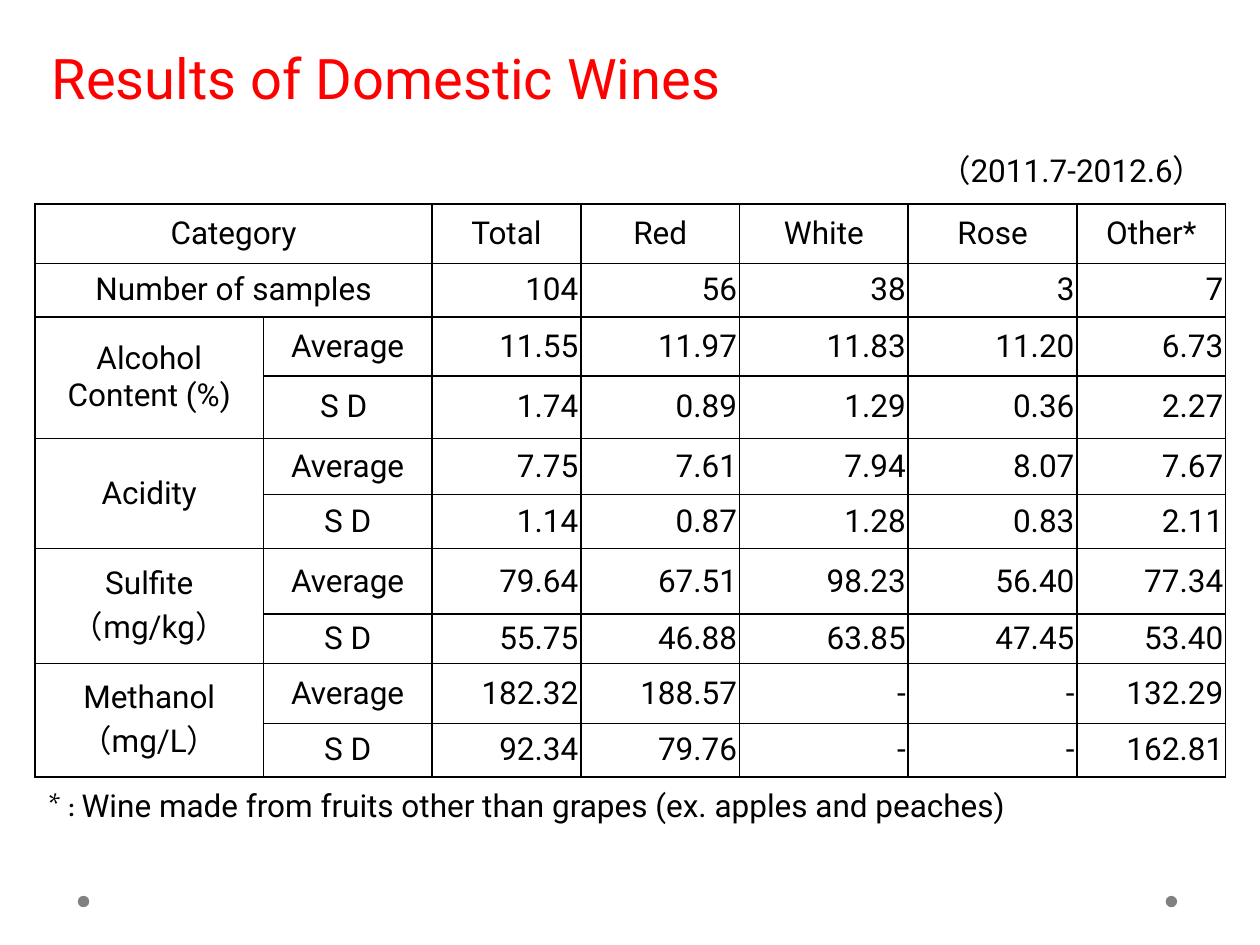
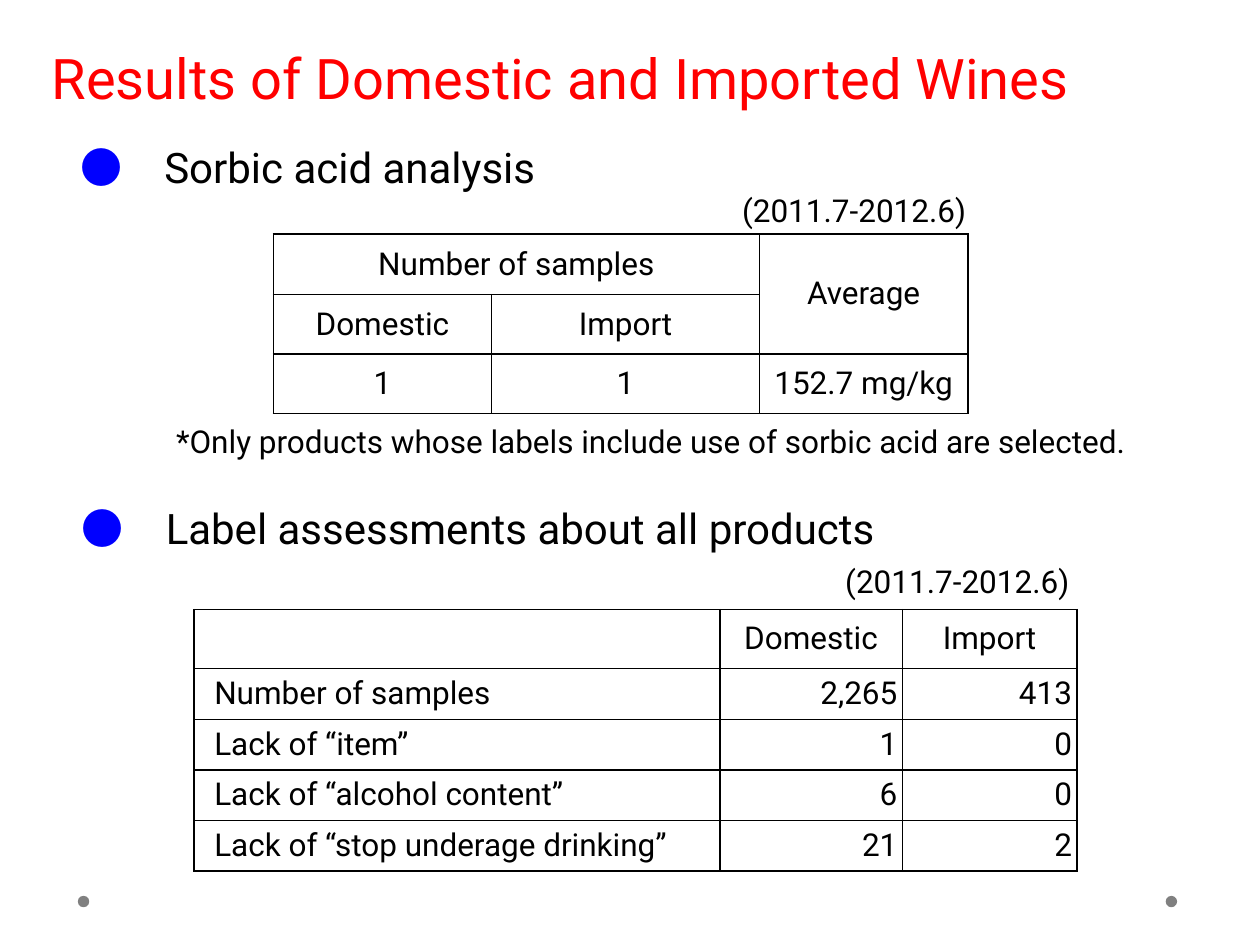
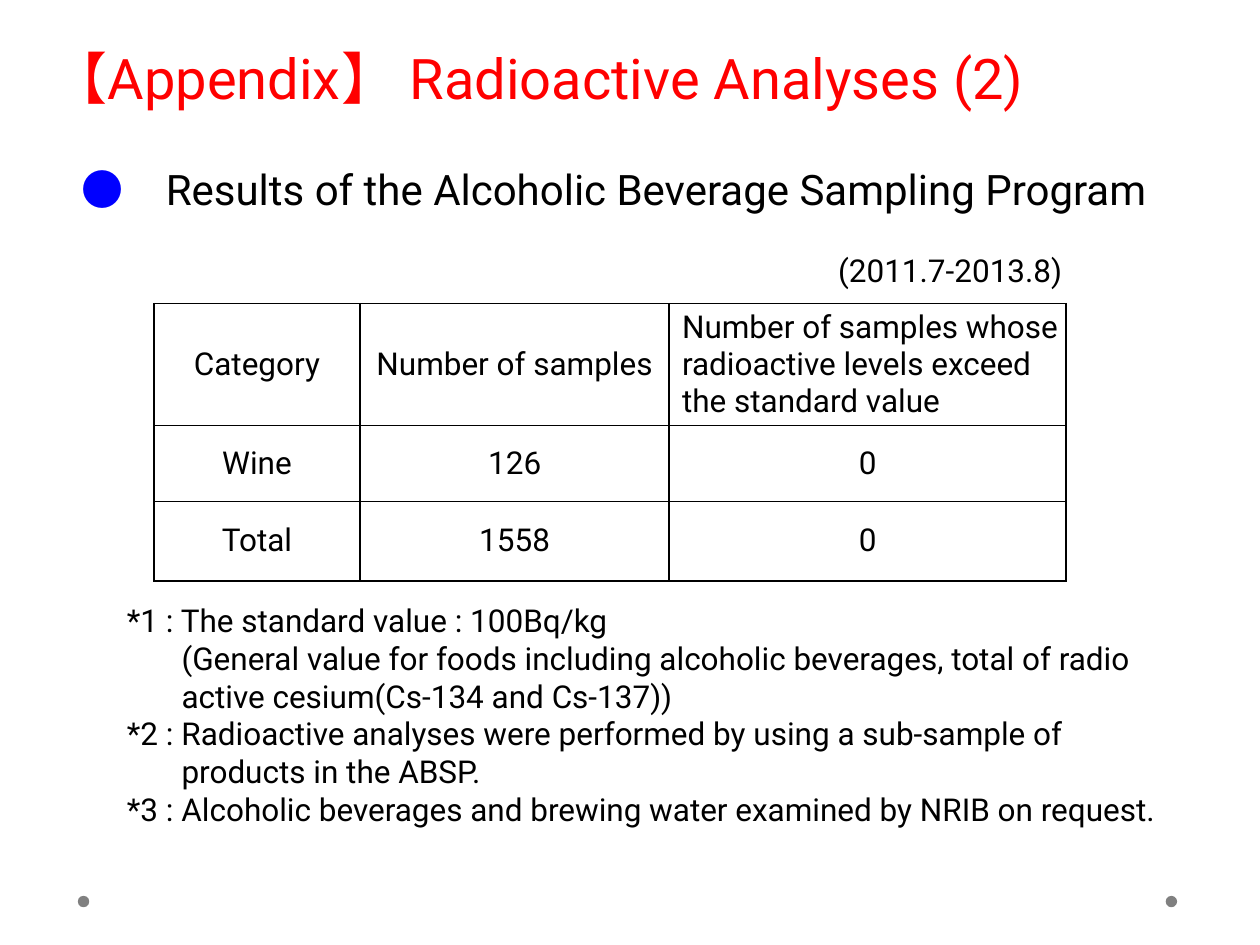
from dataclasses import dataclass

import lxml.etree
import pptx
import pptx.dml.color
import pptx.enum.shapes
import pptx.enum.text
import pptx.oxml.ns
import pptx.presentation
import pptx.slide
import pptx.table
import pptx.text.text
import pptx.util

Cm, Pt = pptx.util.Cm, pptx.util.Pt
Color = pptx.dml.color.RGBColor
Align = pptx.enum.text.PP_ALIGN
qn = pptx.oxml.ns.qn


# Shared look
@dataclass(frozen=True)
class Theme:
    font: str = "Roboto"
    serif: str = "Vollkorn"
    ink: Color = Color(0, 0, 0)
    red: Color = Color(255, 0, 0)
    blue: Color = Color(0, 0, 255)
    grey: Color = Color(128, 128, 128)
    title: int = 32
    head: int = 24
    body: int = 18
    rule: int = 1


THEME = Theme()
ALIGN = {"l": Align.LEFT, "c": Align.CENTER, "r": Align.RIGHT}
LEFT = "<"  # cell joined to the one on its left
UP = "^"  # cell joined to the one above


# Parts of a slide, lengths in centimetres
@dataclass(frozen=True)
class Run:
    text: str
    size: int = THEME.body
    color: Color = THEME.ink
    font: str = THEME.font


@dataclass(frozen=True)
class Line:
    runs: tuple[Run, ...]
    indent: float = 0


@dataclass(frozen=True)
class Label:
    x: float
    y: float
    width: float
    lines: tuple[Line, ...]
    align: str = "l"
    height: float = 1.02


@dataclass(frozen=True)
class Grid:
    x: float
    y: float
    cols: tuple[float, ...]
    rows: tuple[float, ...]
    cells: tuple[tuple[str, ...], ...]
    head: str  # alignment of each column in the first row
    body: str  # alignment of each column below it
    inset: float
    indent: float = 0  # for left-aligned cells


@dataclass(frozen=True)
class Page:
    title: str
    labels: tuple[Label, ...]
    grids: tuple[Grid, ...]


def plain(text: str, indent: float = 0) -> Line:
    return Line((Run(text),), indent)


def point(x: float, y: float, text: str) -> Label:
    """A heading with a blue bullet."""
    runs = Run("●　", THEME.head, THEME.blue), Run(text, THEME.head)
    return Label(x, y, 23.7, (Line(runs),), height=1.27)


# Drawing
def write(para: pptx.text.text._Paragraph, line: Line, align: str) -> None:
    para.alignment = ALIGN[align]
    if line.indent:
        para._p.get_or_add_pPr().set("marL", str(Cm(line.indent)))
    for part in line.runs:
        run = para.add_run()
        run.text = part.text
        run.font.size = Pt(part.size)
        run.font.name = part.font
        run.font.color.rgb = part.color


def fill(frame: pptx.text.text.TextFrame, lines: tuple[Line, ...], align: str) -> None:
    for i, line in enumerate(lines):
        para = frame.add_paragraph() if i else frame.paragraphs[0]
        write(para, line, align)


def add_label(slide: pptx.slide.Slide, label: Label) -> None:
    box = slide.shapes.add_textbox(
        Cm(label.x), Cm(label.y), Cm(label.width), Cm(label.height))
    box.text_frame.word_wrap = True
    fill(box.text_frame, label.lines, label.align)


def add_title(slide: pptx.slide.Slide, text: str) -> None:
    title = slide.shapes.title
    title.left, title.top = Cm(0.79), Cm(0.74)
    title.width, title.height = Cm(24.61), Cm(1.63)
    frame = title.text_frame
    frame.vertical_anchor = pptx.enum.text.MSO_ANCHOR.TOP
    frame.auto_size = pptx.enum.text.MSO_AUTO_SIZE.NONE
    fill(frame, (Line((Run(text, THEME.title, THEME.red),)),), "l")


def rule_cell(cell: pptx.table._Cell) -> None:
    """Clear the fill and draw a line on all four sides."""
    cell.fill.background()
    props = cell._tc.get_or_add_tcPr()
    for i, side in enumerate(("lnL", "lnR", "lnT", "lnB")):
        edge = lxml.etree.Element(qn(f"a:{side}"), w=str(Pt(THEME.rule)))
        solid = lxml.etree.SubElement(edge, qn("a:solidFill"))
        lxml.etree.SubElement(solid, qn("a:srgbClr"), val=str(THEME.ink))
        props.insert(i, edge)


def add_grid(slide: pptx.slide.Slide, grid: Grid) -> None:
    high, wide = len(grid.rows), len(grid.cols)
    table = slide.shapes.add_table(
        high, wide, Cm(grid.x), Cm(grid.y),
        Cm(sum(grid.cols)), Cm(sum(grid.rows))).table
    table.first_row = table.horz_banding = False
    for col, width in zip(table.columns, grid.cols):
        col.width = Cm(width)
    for row, height in zip(table.rows, grid.rows):
        row.height = Cm(height)

    for r, texts in enumerate(grid.cells):
        for c, text in enumerate(texts):
            cell = table.cell(r, c)
            rule_cell(cell)
            if text in ("", LEFT, UP):
                continue
            cell.vertical_anchor = pptx.enum.text.MSO_ANCHOR.MIDDLE
            cell.margin_left = cell.margin_right = Cm(grid.inset)
            cell.margin_top = cell.margin_bottom = Cm(grid.inset)
            align = (grid.body if r else grid.head)[c]
            indent = grid.indent if align == "l" else 0
            lines = tuple(plain(t, indent) for t in text.split("\n"))
            fill(cell.text_frame, lines, align)
            # Join the marked neighbours
            down, right = r, c
            while right + 1 < wide and texts[right + 1] == LEFT:
                right += 1
            while down + 1 < high and grid.cells[down + 1][c] == UP:
                down += 1
            if (down, right) != (r, c):
                cell.merge(table.cell(down, right))


def add_dots(slide: pptx.slide.Slide) -> None:
    """Put the two footer dots on the layout of the slide."""
    for x in (1.57, 23.5):
        dot = slide.shapes.add_shape(
            pptx.enum.shapes.MSO_SHAPE.OVAL, Cm(x), Cm(18.06), Cm(0.23), Cm(0.23))
        dot.shadow.inherit = False
        dot.fill.solid()
        dot.fill.fore_color.rgb = THEME.grey
        dot.line.fill.background()
        slide.slide_layout.shapes.element.append(dot.element)


# Content
DOMESTIC = Page(
    "Results of Domestic Wines",
    (
        Label(17.91, 2.92, 7.39, (plain("（2011.7-2012.6）"),), "c"),
        Label(0.71, 15.72, 24.69, (Line((
            Run("* : ", font=THEME.serif),
            Run("Wine made from fruits other than grapes (ex. apples and peaches)"),
        )),)),
    ),
    (Grid(
        0.71, 4.11,
        (4.6, 3.4, 3, 3.2, 3.4, 3.4, 3),
        (1.2, 1.08, 1.19, 1.26, 1.13, 1.09, 1.32, 1, 1.21, 1.07),
        (
            ("Category", LEFT, "Total", "Red", "White", "Rose", "Other*"),
            ("Number of samples", LEFT, "104", "56", "38", "3", "7"),
            ("Alcohol Content (%)", "Average", "11.55", "11.97", "11.83", "11.20", "6.73"),
            (UP, "S D ", "1.74", "0.89", "1.29", "0.36", "2.27"),
            ("Acidity", "Average", "7.75", "7.61", "7.94", "8.07", "7.67"),
            (UP, "S D", "1.14", "0.87", "1.28", "0.83", "2.11"),
            ("Sulfite\n（mg/kg）", "Average", "79.64", "67.51", "98.23", "56.40", "77.34"),
            (UP, "S D", "55.75", "46.88", "63.85", "47.45", "53.40"),
            ("Methanol（mg/L）", "Average", "182.32", "188.57", "-", "-", "132.29"),
            (UP, "S D", "92.34", "79.76", "-", "-", "162.81"),
        ),
        "ccccccc", "ccrrrrr", 0.05),),
)

BOTH = Page(
    "Results of Domestic and Imported Wines",
    (
        point(1.37, 2.72, "Sorbic acid analysis"),
        Label(14.71, 3.73, 5.69, (plain("(2011.7-2012.6)"),)),
        Label(3.3, 8.38, 19.79, (plain(
            "*Only products whose labels include use of sorbic acid are selected."),)),
        point(1.4, 10.01, "Label assessments about all products"),
        Label(16.79, 11.2, 5.69, (plain("(2011.7-2012.6)"),)),
    ),
    (
        Grid(
            5.51, 4.72, (4.4, 5.4, 4.2), (1.22, 1.2, 1.2),
            (
                ("Number of samples", LEFT, "Average"),
                ("Domestic", "Import", UP),
                ("1", "1", "152.7 mg/kg"),
            ),
            "ccc", "ccc", 0.08),
        Grid(
            3.91, 12.29, (10.6, 3.68, 3.52), (1.19,) + 4 * (1.02,),
            (
                ("", "Domestic", "Import"),
                ("Number of samples", "2,265", "413"),
                ("Lack of “item”", "1", "0"),
                ("Lack of “alcohol content”", "6", "0"),
                ("Lack of “stop underage drinking”", "21", "2"),
            ),
            "lcc", "lrr", 0.1, 0.31),
    ),
)

HANG = 1.1
RADIO = Page(
    "【Appendix】 Radioactive Analyses (2)",
    (
        point(1.4, 3.18, "Results of the Alcoholic Beverage Sampling Program"),
        Label(15.6, 4.93, 7.11, (plain("(2011.7-2013.8)"),), "c"),
        Label(2.31, 11.99, 22.2, (
            plain("*1 : The standard value : 100Bq/kg"),
            plain("(General value for foods including alcoholic beverages, total of radio", HANG),
            plain("active cesium(Cs-134 and Cs-137))", HANG),
            plain("*2 : Radioactive analyses were performed by using a sub-sample of"),
            plain("products in the ABSP.", HANG),
            plain("*3 : Alcoholic beverages and brewing water examined by NRIB on request."),
        ), height=4.88),
    ),
    (Grid(
        3.1, 6.12, (4.16, 6.23, 8), (2.46, 1.53, 1.6),
        (
            ("Category", "Number of samples",
             "Number of samples whose\nradioactive levels exceed\nthe standard value"),
            ("Wine", "126", "0"),
            ("Total", "1558", "0"),
        ),
        "ccl", "ccc", 0.1, 0.16),),
)


def main() -> None:
    deck = pptx.Presentation()
    deck.slide_width, deck.slide_height = Cm(25.4), Cm(19.05)
    layout = deck.slide_layouts[5]  # title only
    for i, page in enumerate((DOMESTIC, BOTH, RADIO)):
        slide = deck.slides.add_slide(layout)
        if i == 0:
            add_dots(slide)
        add_title(slide, page.title)
        for grid in page.grids:
            add_grid(slide, grid)
        for label in page.labels:
            add_label(slide, label)
    deck.save("out.pptx")


if __name__ == "__main__":
    main()
